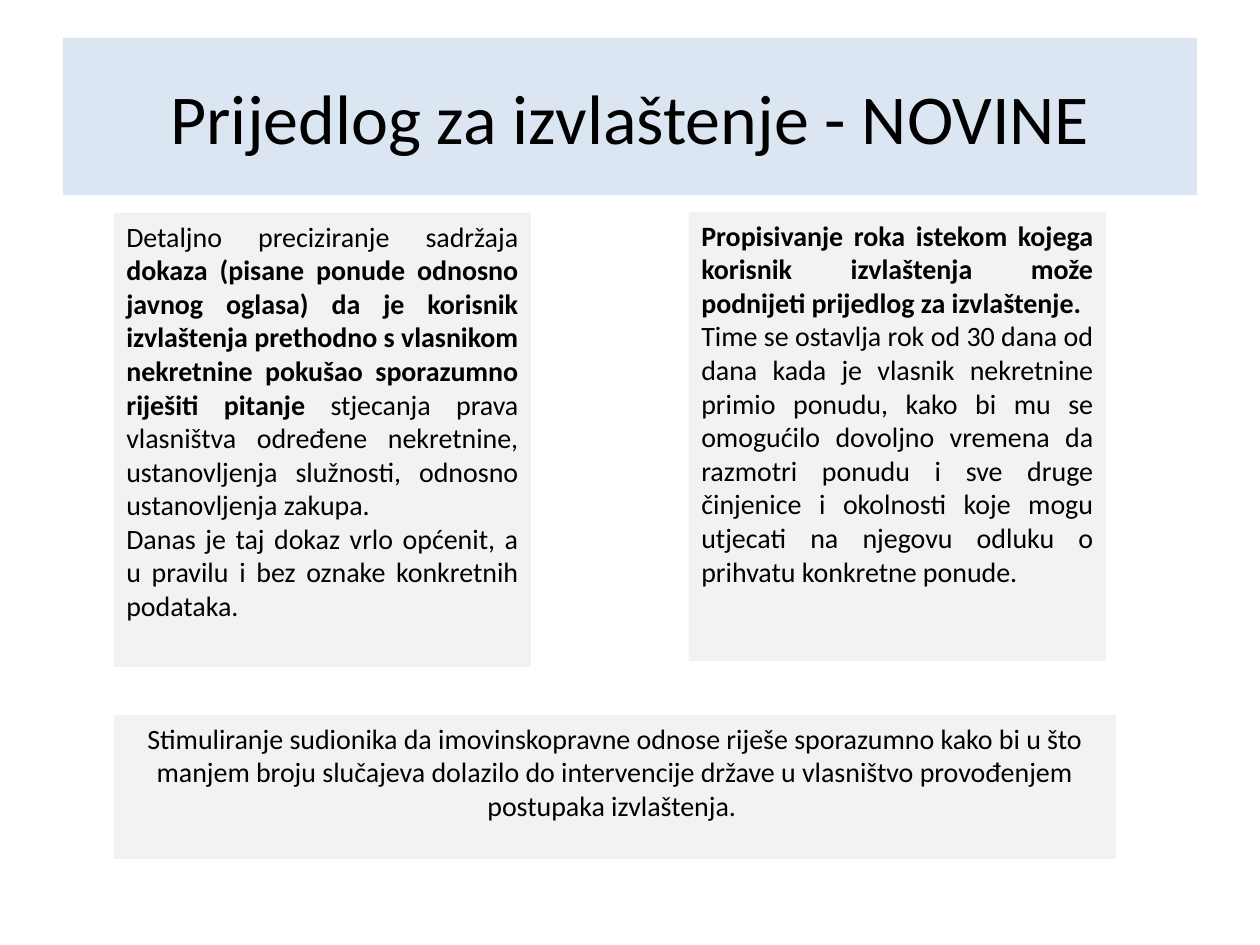
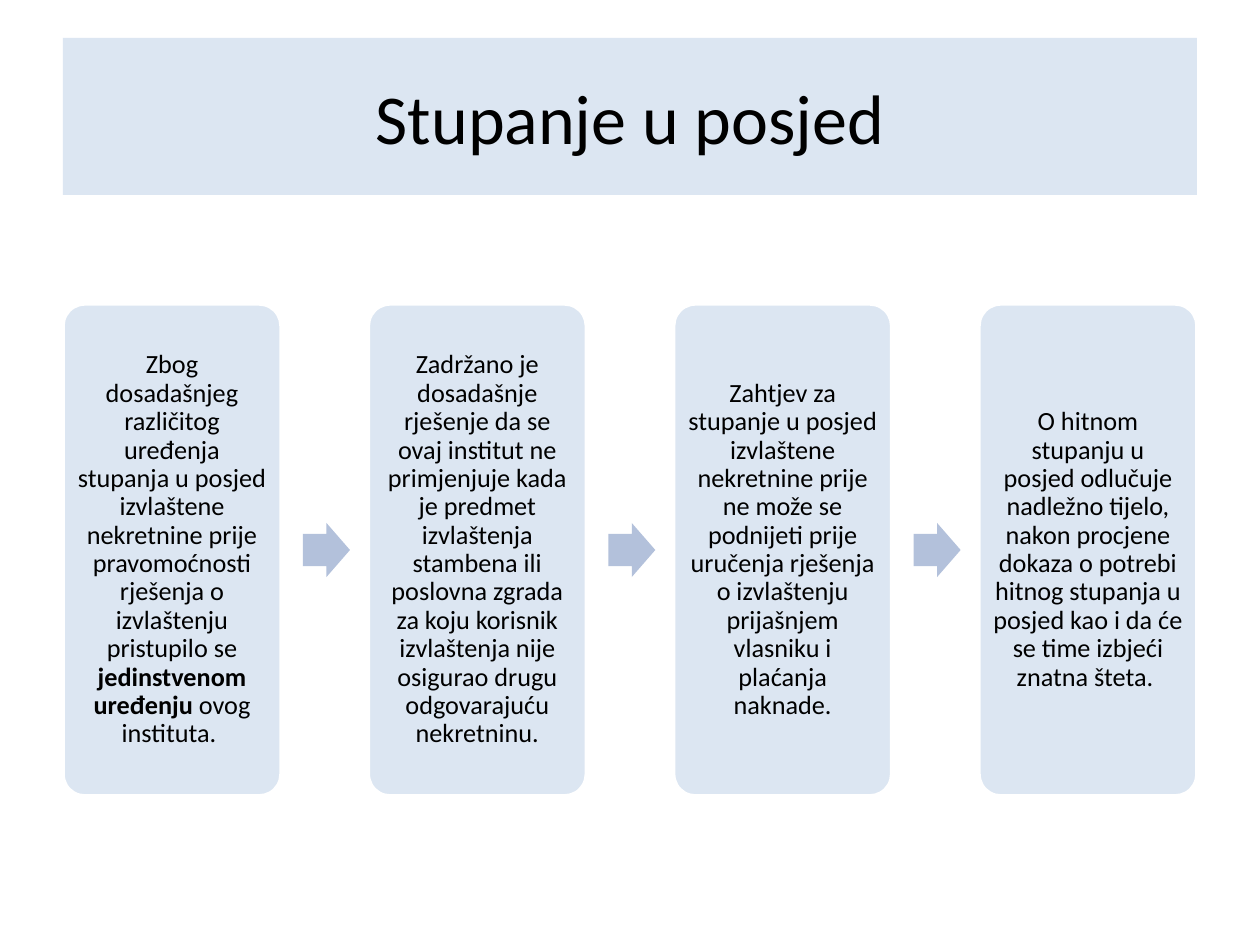
import pptx
import pptx.dml.color
import pptx.enum.shapes
import pptx.enum.text
import pptx.util
from dataclasses import dataclass

SHAPES = pptx.enum.shapes.MSO_SHAPE
ALIGN = pptx.enum.text.PP_ALIGN
ANCHOR = pptx.enum.text.MSO_ANCHOR
PX_PER_INCH = 126


@dataclass(frozen=True)
class Theme:
    """Colours, font and type sizes shared by the slides."""
    band: str = "DCE6F2"
    panel: str = "F2F2F2"
    arrow: str = "B3C1DB"
    outline: str = "FFFFFF"
    text: str = "000000"
    font: str = "Calibri"
    title_size: int = 40
    panel_size: int = 16
    card_size: int = 15


@dataclass(frozen=True)
class Box:
    """A rectangle in px."""
    left: int
    top: int
    width: int
    height: int


THEME = Theme()
TITLE_BAND = Box(63, 38, 1134, 157)
NEWS_PANELS = [
    (Box(114, 213, 417, 454), ALIGN.JUSTIFY, [
        [("Detaljno preciziranje sadržaja ", False),
         ("dokaza (pisane ponude odnosno javnog oglasa) da je korisnik izvlaštenja "
          "prethodno s vlasnikom nekretnine pokušao sporazumno riješiti pitanje", True),
         (" stjecanja prava vlasništva određene nekretnine, ustanovljenja služnosti, "
          "odnosno ustanovljenja zakupa.", False)],
        [("Danas je taj dokaz vrlo općenit, a u pravilu i bez oznake konkretnih "
          "podataka.", False)]]),
    (Box(689, 212, 417, 449), ALIGN.JUSTIFY, [
        [("Propisivanje roka istekom kojega korisnik izvlaštenja može podnijeti "
          "prijedlog za izvlaštenje.", True)],
        [("Time se ostavlja rok od 30 dana od dana kada je vlasnik nekretnine primio "
          "ponudu, kako bi mu se omogućilo dovoljno vremena da razmotri ponudu i sve "
          "druge činjenice i okolnosti koje mogu utjecati na njegovu odluku o prihvatu "
          "konkretne ponude.", False)]]),
    (Box(114, 715, 1002, 144), ALIGN.CENTER, [
        [("Stimuliranje sudionika da imovinskopravne odnose riješe sporazumno kako bi u "
          "što manjem broju slučajeva dolazilo do intervencije države u vlasništvo "
          "provođenjem postupaka izvlaštenja. ", False)]]),
]
POSSESSION_FLOW = Box(63, 304, 1134, 492)
POSSESSION_STEPS = [
    [("Zbog dosadašnjeg različitog uređenja stupanja u posjed izvlaštene nekretnine "
      "prije pravomoćnosti rješenja o izvlaštenju pristupilo se ", False),
     ("jedinstvenom uređenju ", True),
     ("ovog instituta. ", False)],
    [("Zadržano je dosadašnje rješenje da se ovaj institut ne primjenjuje kada je "
      "predmet izvlaštenja stambena ili poslovna zgrada za koju korisnik izvlaštenja "
      "nije osigurao drugu odgovarajuću nekretninu.", False)],
    [("Zahtjev za stupanje u posjed izvlaštene nekretnine prije ne može se podnijeti "
      "prije uručenja rješenja o izvlaštenju prijašnjem vlasniku i plaćanja "
      "naknade.", False)],
    [("O hitnom stupanju u posjed odlučuje nadležno tijelo, nakon procjene dokaza o "
      "potrebi hitnog stupanja u posjed kao i da će se time izbjeći znatna "
      "šteta. ", False)],
]


def px(length):
    """Turn px into EMU."""
    return pptx.util.Emu(round(length * 914400 / PX_PER_INCH))


def color(code):
    """Turn a hex code into a colour."""
    return pptx.dml.color.RGBColor.from_string(code)


def add_filled(slide, preset, box, fill):
    """Add a flat preset shape without outline or shadow."""
    shape = slide.shapes.add_shape(
        preset, px(box.left), px(box.top), px(box.width), px(box.height))
    shape.shadow.inherit = False
    shape.fill.solid()
    shape.fill.fore_color.rgb = color(fill)
    shape.line.fill.background()
    return shape


def write(shape, paragraphs, size, align=ALIGN.CENTER, anchor=ANCHOR.MIDDLE):
    """Write paragraphs of (text, bold) runs and return the text frame."""
    frame = shape.text_frame
    frame.word_wrap = True
    frame.vertical_anchor = anchor
    for index, runs in enumerate(paragraphs):
        paragraph = frame.add_paragraph() if index else frame.paragraphs[0]
        paragraph.alignment = align
        paragraph.font.name = THEME.font
        paragraph.font.size = pptx.util.Pt(size)
        paragraph.font.color.rgb = color(THEME.text)
        for text, bold in runs:
            run = paragraph.add_run()
            run.text = text
            run.font.bold = bold
    return frame


def add_titled_slide(deck, title):
    """Add a blank slide with the title band."""
    slide = deck.slides.add_slide(deck.slide_layouts[6])
    band = add_filled(slide, SHAPES.RECTANGLE, TITLE_BAND, THEME.band)
    write(band, [[(title, False)]], THEME.title_size)
    return slide


def add_panel(slide, box, align, paragraphs):
    """Add a grey text panel."""
    panel = add_filled(slide, SHAPES.RECTANGLE, box, THEME.panel)
    write(panel, paragraphs, THEME.panel_size, align, ANCHOR.TOP)


def add_step(slide, box, runs):
    """Add one rounded card of the flow."""
    card = add_filled(slide, SHAPES.ROUNDED_RECTANGLE, box, THEME.band)
    card.adjustments[0] = 0.1
    card.line.color.rgb = color(THEME.outline)
    card.line.width = pptx.util.Pt(2)
    frame = write(card, [runs], THEME.card_size)
    frame.margin_left = frame.margin_right = px(8)
    frame.margin_top = frame.margin_bottom = px(8)
    frame.paragraphs[0].line_spacing = 0.9


def add_flow(slide, box, steps):
    """Spread cards evenly over the box, with an arrow after each but the last."""
    card_width, arrow_width, arrow_height, arrow_gap = 218, 47, 54, 22
    pitch = (box.width - card_width) / (len(steps) - 1)
    for index, runs in enumerate(steps):
        left = box.left + index * pitch
        add_step(slide, Box(left, box.top, card_width, box.height), runs)
        if index < len(steps) - 1:
            arrow_box = Box(left + card_width + arrow_gap,
                            box.top + (box.height - arrow_height) / 2,
                            arrow_width, arrow_height)
            arrow = add_filled(slide, SHAPES.RIGHT_ARROW, arrow_box, THEME.arrow)
            arrow.adjustments[0] = 0.6
            arrow.adjustments[1] = 0.5


def build_news_slide(deck):
    """Build the slide on what is new in the proposal."""
    slide = add_titled_slide(deck, "Prijedlog za izvlaštenje - NOVINE")
    for box, align, paragraphs in NEWS_PANELS:
        add_panel(slide, box, align, paragraphs)


def build_possession_slide(deck):
    """Build the slide on entering into possession."""
    slide = add_titled_slide(deck, "Stupanje u posjed")
    add_flow(slide, POSSESSION_FLOW, POSSESSION_STEPS)


def main():
    """Build and save the deck."""
    deck = pptx.Presentation()
    deck.slide_width = px(1260)
    deck.slide_height = px(945)
    build_news_slide(deck)
    build_possession_slide(deck)
    deck.save("out.pptx")


if __name__ == "__main__":
    main()
